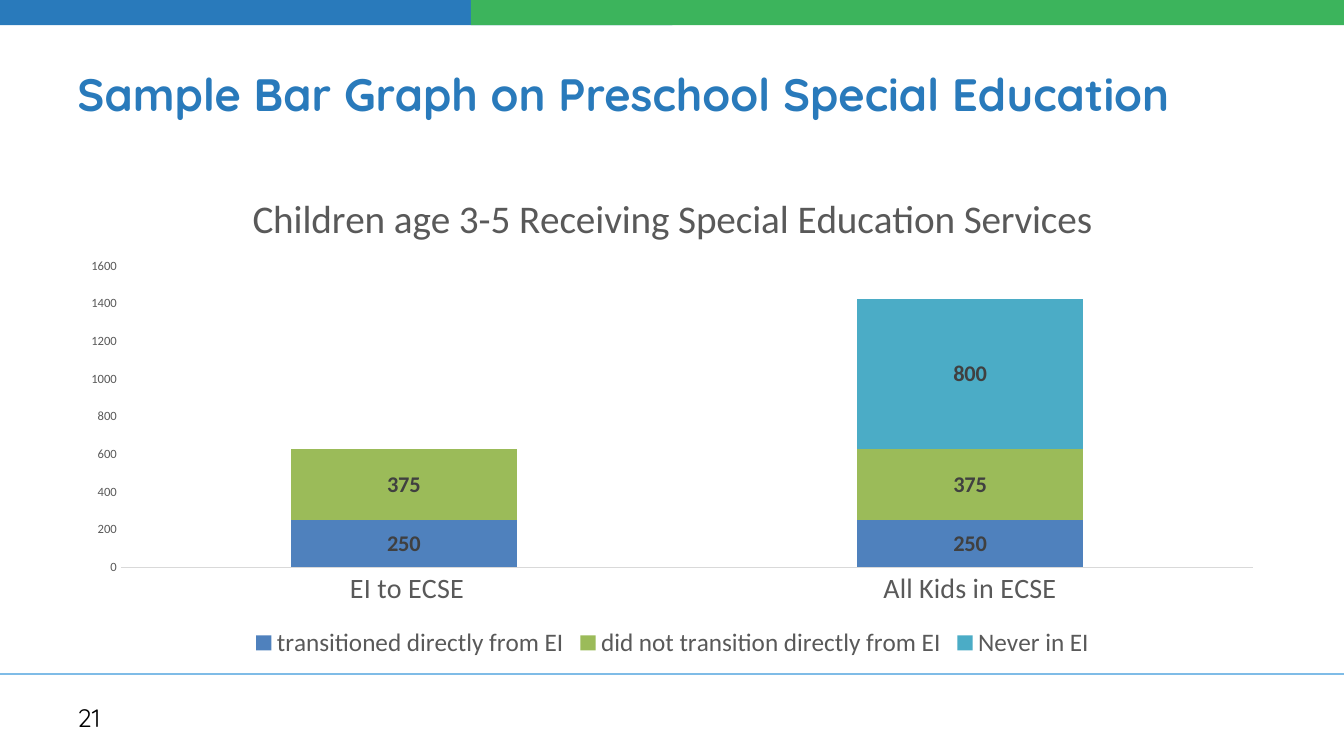
from pptx import Presentation
from pptx import util as u
from pptx.chart.data import CategoryChartData
from pptx.dml.color import RGBColor
from pptx.enum import chart as ch, shapes, text
from pptx.oxml import parse_xml
from pptx.oxml.ns import nsdecls, qn

TITLE = "Sample Bar Graph on Preschool Special Education"
PAGE_NUMBER = "21"
CHART_TITLE = "Children age 3-5 Receiving Special Education Services"
CATEGORIES = [" EI to ECSE", "All Kids in ECSE"]
SERIES = [
    ("transitioned directly from EI", [250, 250], "4F81BD"),
    ("did not transition directly from EI", [375, 375], "9BBB59"),
    ("Never in EI", [None, 800], "4BACC6"),
]
BANDS = [(0, 6.67, "297ABB"), (4.67, 8.67, "3CB45C")]
TEXTS = [
    (TITLE, (0.67, 0.3, 12, 1.25), 32.4, "297ABB", True),
    (PAGE_NUMBER, (0.67, 6.92, 3.11, 0.4), 18, "000000", False),
]
GREY = "595959"


def color(value):
    return RGBColor.from_string(value)


def inches(values):
    return [u.Inches(value) for value in values]


def set_font(font, size, value, bold=False, name="Calibri"):
    font.size, font.bold, font.name = u.Pt(size), bold, name
    font.color.rgb = color(value)


def place(element, index, inner=False, **fractions):
    for old in element.findall(qn("c:layout")):
        element.remove(old)
    target = '<c:layoutTarget val="inner"/>' if inner else ""
    modes = "".join(f'<c:{key}Mode val="edge"/>' for key in "xy")
    sizes = "".join(f'<c:{key} val="{value}"/>' for key, value in fractions.items())
    element.insert(index, parse_xml(
        f'<c:layout {nsdecls("c")}><c:manualLayout>{target}{modes}{sizes}'
        "</c:manualLayout></c:layout>"))


def add_bands(page):
    for left, width, fill in BANDS:
        band = page.shapes.add_shape(
            shapes.MSO_SHAPE.RECTANGLE, *inches((left, -1.25, width, 1.5)))
        band.shadow.inherit = False
        band.fill.solid()
        band.fill.fore_color.rgb = color(fill)
        band.line.fill.background()


def add_footer_line(page):
    line = page.shapes.add_connector(
        shapes.MSO_CONNECTOR.STRAIGHT, *inches((-0.17, 6.69, 13.42, 6.69)))
    line.line.color.rgb = color("7FBCE7")
    line.line.width = u.Pt(1.5)
    line._element.spPr.append(parse_xml(f'<a:effectLst {nsdecls("a")}/>'))


def add_texts(page):
    for words, area, size, value, bold in TEXTS:
        box = page.shapes.add_textbox(*inches(area))
        frame = box.text_frame
        frame.word_wrap = True
        frame.vertical_anchor = text.MSO_ANCHOR.MIDDLE
        para = frame.paragraphs[0]
        para.text = words
        set_font(para.font, size, value, bold, "Quicksand")


def add_graph(page):
    data = CategoryChartData()
    data.categories = CATEGORIES
    for name, values, _ in SERIES:
        data.add_series(name, values)
    chart = page.shapes.add_chart(
        ch.XL_CHART_TYPE.COLUMN_STACKED, *inches((0.67, 1.75, 12, 4.83)), data).chart
    set_font(chart.font, 10, "000000")

    chart.has_title = True
    para = chart.chart_title.text_frame.paragraphs[0]
    para.text = CHART_TITLE
    set_font(para.font, 28, GREY)
    place(chart.chart_title._element, 1, x=0.147, y=0.017)
    place(chart._chartSpace.chart.plotArea, 0, inner=True,
          x=0.044, y=0.184, w=0.936, h=0.619)

    chart.has_legend = True
    chart.legend.position = ch.XL_LEGEND_POSITION.BOTTOM
    chart.legend.include_in_layout = False
    set_font(chart.legend.font, 18, GREY)

    for axis, size in ((chart.category_axis, 20), (chart.value_axis, 9)):
        axis.major_tick_mark = axis.minor_tick_mark = ch.XL_TICK_MARK.NONE
        axis.has_major_gridlines = False
        set_font(axis.tick_labels.font, size, GREY)
    chart.category_axis.format.line.color.rgb = color("D9D9D9")
    chart.category_axis.format.line.width = u.Pt(0.75)
    values = chart.value_axis
    values.format.line.fill.background()
    values.minimum_scale, values.maximum_scale, values.major_unit = 0, 1600, 200

    plot = chart.plots[0]
    plot.gap_width, plot.overlap, plot.vary_by_categories = 150, 100, False
    for series, (_, _, fill) in zip(plot.series, SERIES):
        series.format.fill.solid()
        series.format.fill.fore_color.rgb = color(fill)
        series.data_labels.show_value = True
        series.data_labels.position = ch.XL_LABEL_POSITION.CENTER
        set_font(series.data_labels.font, 16, "404040", True)


def main():
    deck = Presentation()
    deck.slide_width, deck.slide_height = inches((13.33, 7.5))
    page = deck.slides.add_slide(deck.slide_layouts[6])
    add_bands(page)
    add_footer_line(page)
    add_texts(page)
    add_graph(page)
    deck.save("out.pptx")


if __name__ == "__main__":
    main()
